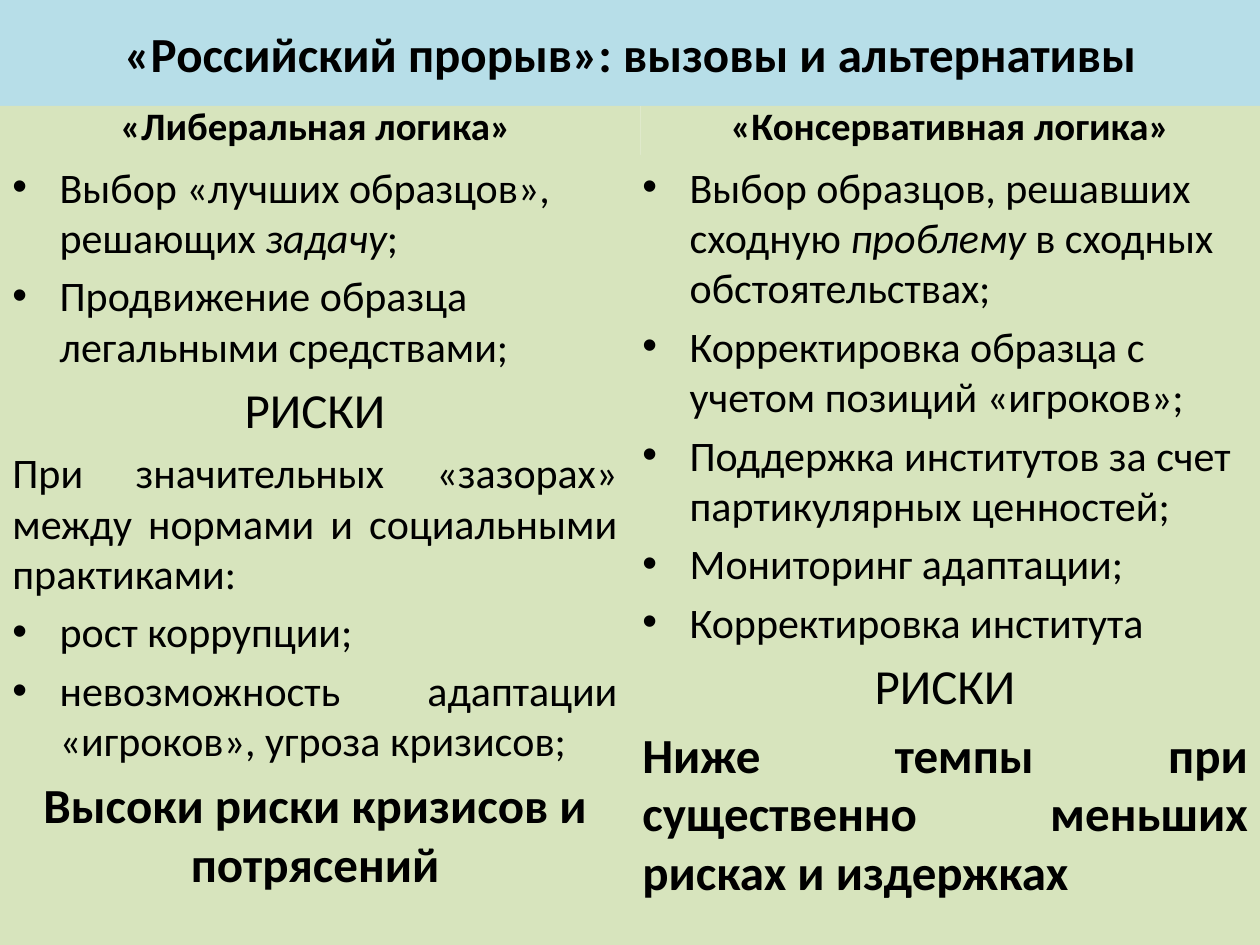
from lxml import etree
from pptx import Presentation
from pptx.dml.color import RGBColor
from pptx.enum.text import MSO_ANCHOR, PP_ALIGN
from pptx.oxml.ns import qn
from pptx.util import Pt

LEFT, CENTER, JUSTIFY = PP_ALIGN.LEFT, PP_ALIGN.CENTER, PP_ALIGN.JUSTIFY
TOP, MIDDLE, BOTTOM = MSO_ANCHOR.TOP, MSO_ANCHOR.MIDDLE, MSO_ANCHOR.BOTTOM

WIDTH, HEIGHT = 720, 540
TITLE_H, HEADER_H = 60.5, 28
BODY_Y = TITLE_H + HEADER_H
HEADER_SPLIT = 366
BLUE, GREEN, BLACK = "B7DEE8", "D7E4BD", "000000"
FONT = "Calibri"
INDENT = 27
SPACING = 0.19


def rgb(value):
    return RGBColor.from_string(value)


def add_panel(s, x, y, w, h, fill, anchor):
    sp = s.shapes.add_textbox(Pt(x), Pt(y), Pt(w), Pt(h))
    sp.fill.solid()
    sp.fill.fore_color.rgb = rgb(fill)
    tf = sp.text_frame
    tf.word_wrap = True
    tf.vertical_anchor = anchor
    return tf


def write(p, text, size, align, bold=False, italic=""):
    p.alignment = align
    p.font.name = FONT
    p.font.size = Pt(size)
    p.font.bold = bold
    p.font.color.rgb = rgb(BLACK)
    before, found, after = text.partition(italic) if italic else (text, "", "")
    for part in (before, found, after):
        if part:
            r = p.add_run()
            r.text = part
            r.font.name = FONT
            r.font.size = Pt(size)
            r.font.bold = bold
            r.font.color.rgb = rgb(BLACK)
            if part == italic:
                r.font.italic = True


def add_bullet(p):
    pPr = p._p.get_or_add_pPr()
    pPr.set("marL", str(Pt(INDENT)))
    pPr.set("indent", str(-Pt(INDENT)))
    font = etree.Element(qn("a:buFont"), typeface="Arial")
    char = etree.Element(qn("a:buChar"), char="•")
    position = 1 if pPr.find(qn("a:spcBef")) is not None else 0
    pPr.insert(position, font)
    pPr.insert(position + 1, char)


def add_heading(s, x, y, w, h, text, size, fill, anchor):
    tf = add_panel(s, x, y, w, h, fill, anchor)
    write(tf.paragraphs[0], text, size, CENTER, bold=True)


def add_column(s, x, items):
    tf = add_panel(s, x, BODY_Y, WIDTH / 2, HEIGHT - BODY_Y, GREEN, TOP)
    for i, (text, size, align, bullet, bold, italic) in enumerate(items):
        p = tf.paragraphs[0] if i == 0 else tf.add_paragraph()
        p.space_before = Pt(round(size * SPACING, 2))
        write(p, text, size, align, bold, italic)
        if bullet:
            add_bullet(p)


def point(text, align=LEFT, italic=""):
    return text, 24, align, True, False, italic


def plain(text, size, align, bold=False):
    return text, size, align, False, bold, ""


def main():
    prs = Presentation()
    prs.slide_width, prs.slide_height = Pt(WIDTH), Pt(HEIGHT)
    s = prs.slides.add_slide(prs.slide_layouts[6])

    add_heading(s, 0, 0, WIDTH, TITLE_H,
                "«Российский прорыв»: вызовы и альтернативы", 28, BLUE, MIDDLE)
    add_heading(s, 0, TITLE_H, HEADER_SPLIT, HEADER_H,
                "«Либеральная логика» ", 22.2, GREEN, BOTTOM)
    add_column(s, 0, [
        point("Выбор «лучших образцов», решающих задачу;", italic="задачу"),
        point("Продвижение образца легальными средствами;"),
        plain("РИСКИ", 28, CENTER),
        plain("При значительных «зазорах» между нормами и социальными практиками:",
              24, JUSTIFY),
        point("рост коррупции;", JUSTIFY),
        point("невозможность адаптации «игроков», угроза кризисов;", JUSTIFY),
        plain("Высоки риски кризисов и потрясений", 28, CENTER, bold=True),
    ])
    add_heading(s, HEADER_SPLIT, TITLE_H, WIDTH - HEADER_SPLIT, HEADER_H,
                "«Консервативная логика»", 22.2, GREEN, BOTTOM)
    add_column(s, WIDTH / 2, [
        point("Выбор образцов, решавших сходную проблему в сходных обстоятельствах;",
              italic="проблему"),
        point("Корректировка образца с учетом позиций «игроков»;"),
        point("Поддержка институтов за счет партикулярных ценностей;"),
        point("Мониторинг адаптации;"),
        point("Корректировка института"),
        plain("РИСКИ", 28, CENTER),
        plain("Ниже темпы при существенно меньших рисках и издержках",
              28, JUSTIFY, bold=True),
    ])
    prs.save("out.pptx")


if __name__ == "__main__":
    main()
